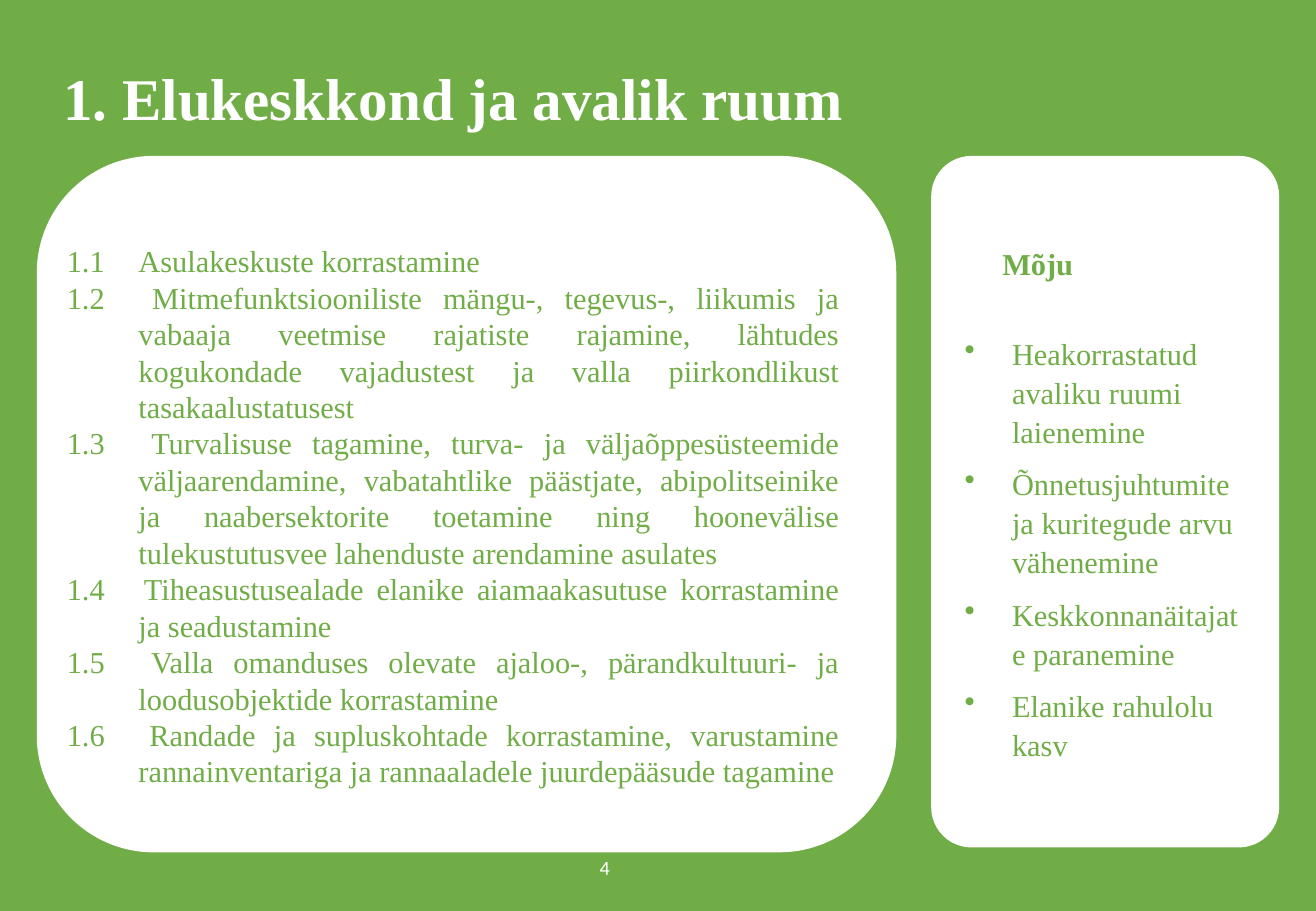
from lxml.etree import SubElement
from pptx import Presentation
from pptx.dml.color import RGBColor
from pptx.enum.shapes import MSO_SHAPE
from pptx.enum.text import MSO_ANCHOR, PP_ALIGN
from pptx.oxml.ns import qn
from pptx.util import Inches, Pt

TITLE = "1. Elukeskkond ja avalik ruum"
PAGE_NUMBER = "4"
ACTIONS = [
    "Asulakeskuste korrastamine",
    "Mitmefunktsiooniliste mängu-, tegevus-, liikumis ja vabaaja veetmise rajatiste "
    "rajamine, lähtudes kogukondade vajadustest ja valla piirkondlikust tasakaalustatusest",
    "Turvalisuse tagamine, turva- ja väljaõppesüsteemide väljaarendamine, vabatahtlike "
    "päästjate, abipolitseinike ja naabersektorite toetamine ning hoonevälise "
    "tulekustutusvee lahenduste arendamine asulates",
    "Tiheasustusealade elanike aiamaakasutuse korrastamine ja seadustamine",
    "Valla omanduses olevate ajaloo-, pärandkultuuri- ja loodusobjektide korrastamine",
    "Randade ja supluskohtade korrastamine, varustamine rannainventariga ja "
    "rannaaladele juurdepääsude tagamine",
]
IMPACT_HEADING = "Mõju"
IMPACTS = [
    "Heakorrastatud avaliku ruumi laienemine",
    "Õnnetusjuhtumite ja kuritegude arvu vähenemine",
    "Keskkonnanäitajate paranemine",
    "Elanike rahulolu kasv",
]
# left, top, width, height, corner ratio
PANELS = [(0.31, 1.29, 7.06, 5.72, 0.167), (7.67, 1.29, 2.85, 5.68, 0.114)]
COLOURS = {"green": "70AD47", "white": "FFFFFF"}
SERIF = "Times New Roman"


def colour(name):
    return RGBColor.from_string(COLOURS[name])


def add_panel(page, left, top, width, height, corner):
    panel = page.shapes.add_shape(MSO_SHAPE.ROUNDED_RECTANGLE, Inches(left), Inches(top),
                                  Inches(width), Inches(height))
    panel.adjustments[0] = corner
    panel.shadow.inherit = False
    panel.fill.solid()
    panel.fill.fore_color.rgb = colour("white")
    panel.line.color.rgb = colour("white")
    panel.line.width = Pt(1)


def add_text(page, left, top, width, height, lines, size, ink, font=SERIF,
             anchor=MSO_ANCHOR.MIDDLE, inset=0.05, wrap=True):
    """Add a text box with one paragraph per line and return its paragraphs."""
    box = page.shapes.add_textbox(Inches(left), Inches(top), Inches(width), Inches(height))
    frame = box.text_frame
    frame.word_wrap = wrap
    frame.vertical_anchor = anchor
    frame.margin_left = frame.margin_right = Inches(inset)
    frame.margin_top = frame.margin_bottom = Inches(0.05)
    frame.text = "\n".join(lines)
    for para in frame.paragraphs:
        para.font.size = Pt(size)
        para.font.name = font
        para.font.color.rgb = colour(ink)
    return frame.paragraphs


def indent(para, margin, first=0.0, bullet=None):
    """Set the left margin, the first line offset and an optional bullet."""
    properties = para._p.get_or_add_pPr()
    properties.set("marL", str(Inches(margin)))
    properties.set("indent", str(Inches(first)))
    if bullet:
        mark = SubElement(properties, qn("a:buChar"), char=bullet)
        properties.find(qn("a:defRPr")).addprevious(mark)


deck = Presentation()
deck.slide_width, deck.slide_height = Inches(10.83), Inches(7.5)
page = deck.slides.add_slide(deck.slide_layouts[6])
page.background.fill.solid()
page.background.fill.fore_color.rgb = colour("green")

for panel in PANELS:
    add_panel(page, *panel)

title = add_text(page, 0.47, 0.52, 9.89, 0.63, [TITLE], 35, "white")[0]
title.font.bold = True
title.line_spacing = 0.9

numbered = [f"1.{number} \t{action}" for number, action in enumerate(ACTIONS, 1)]
for para in add_text(page, 0.5, 1.77, 6.46, 4.95, numbered, 18, "green"):
    para.alignment = PP_ALIGN.JUSTIFY
    indent(para, 0.59, -0.59)

heading, *impacts = add_text(page, 7.84, 1.95, 2.49, 4.41, [IMPACT_HEADING, *IMPACTS],
                             18, "green", anchor=MSO_ANCHOR.TOP, inset=0.1)
for para in (heading, *impacts):
    para.line_spacing = 1.07
    para.space_after = Pt(8)
heading.font.bold = True
heading.space_after = Pt(30)
indent(heading, 0.31)
for para in impacts:
    indent(para, 0.39, -0.39, "•")

number = add_text(page, 4.87, 6.99, 0.2, 0.3, [PAGE_NUMBER], 12, "white", "Calibri", wrap=False)[0]
number.alignment = PP_ALIGN.RIGHT

deck.save("out.pptx")
